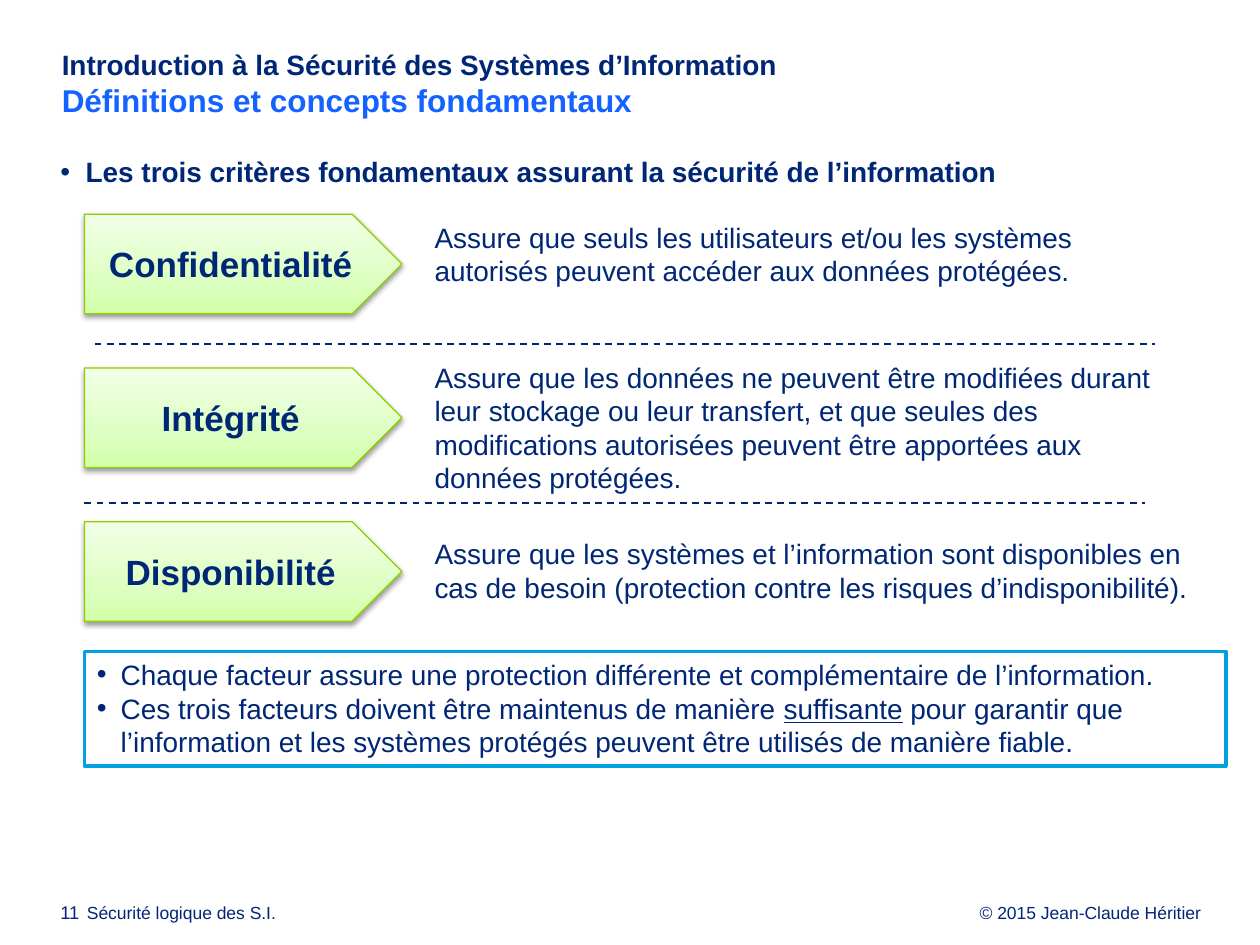
from pptx import Presentation, util as u
from pptx.dml.color import RGBColor
from pptx.enum import dml, shapes, text
from pptx.oxml import parse_xml
from pptx.oxml.ns import nsdecls, qn

NAVY, BLUE, CYAN, LIME = "002776", "1462FF", "00A1DE", "8FCF00"
GRAD = [(0, "D0FFA8"), (35, "DDFFC2"), (100, "F2FFE8")]
TITLE = [("Introduction à la Sécurité des Systèmes d’Information", 16, NAVY),
         ("Définitions et concepts fondamentaux", 18, BLUE)]
HEAD = "Les trois critères fondamentaux assurant la sécurité de l’information"
ROWS = [
    ("Confidentialité", 1.7, 0.64,
     "Assure que seuls les utilisateurs et/ou les systèmes autorisés "
     "peuvent accéder aux données protégées."),
    ("Intégrité", 2.81, 1.18,
     "Assure que les données ne peuvent être modifiées durant leur stockage ou leur "
     "transfert, et que seules des modifications autorisées peuvent être apportées "
     "aux données protégées."),
    ("Disponibilité", 4.21, 0.64,
     "Assure que les systèmes et l’information sont disponibles en cas de besoin "
     "(protection contre les risques d’indisponibilité)."),
]
NOTES = [
    [("Chaque facteur assure une protection différente et complémentaire "
      "de l’information.", False)],
    [("Ces trois facteurs doivent être maintenus de manière ", False),
     ("suffisante", True),
     (" pour garantir que l’information et les systèmes protégés peuvent être "
      "utilisés de manière fiable.", False)],
]
RULES = [(0.75, 2.73), (0.67, 3.99)]
FOOT = [("11", 0.48, 0.26, 10.5, "LEFT"),
        ("Sécurité logique des S.I.", 0.69, 2.53, 10, "LEFT"),
        ("© 2015 Jean-Claude Héritier", 7, 2.53, 10, "RIGHT")]


def rgb(hue):
    return RGBColor.from_string(hue)


def put(obj, **vals):
    for key, val in vals.items():
        setattr(obj, key, val)


def box(*at):
    return [u.Inches(n) for n in at]


def frame(shape, ins=(0.1, 0.05, 0.1, 0.05), anchor="TOP"):
    left, top, right, base = box(*ins)
    put(shape.text_frame, margin_left=left, margin_top=top, margin_right=right,
        margin_bottom=base, word_wrap=True,
        vertical_anchor=getattr(text.MSO_ANCHOR, anchor))
    return shape.text_frame


def write(para, words, size=16, hue=NAVY, bold=False, line=False):
    run = para.add_run()
    run.text = words
    put(run.font, name="Arial", size=u.Pt(size), bold=bold, underline=line)
    run.font.color.rgb = rgb(hue)


def align(para, side):
    para.alignment = getattr(text.PP_ALIGN, side)


def bullet(para, gap):
    prop = para._p.get_or_add_pPr()
    prop.set("marL", str(u.Inches(gap)))
    prop.set("indent", str(-u.Inches(gap)))
    for tag in ('a:buFont %s typeface="Arial"', 'a:buChar %s char="•"'):
        prop.append(parse_xml(f"<{tag % nsdecls('a')}/>"))


def shade(shape):
    shape.fill.gradient()
    shape.fill.gradient_angle = 90
    stops = shape._element.spPr.find(qn("a:gradFill")).find(qn("a:gsLst"))
    for stop in list(stops):
        stops.remove(stop)
    for pos, hue in GRAD:
        stops.append(parse_xml(f'<a:gs {nsdecls("a")} pos="{pos * 1000}">'
                               f'<a:srgbClr val="{hue}"/></a:gs>'))
    shape._element.spPr.find(qn("a:effectLst")).append(parse_xml(
        f'<a:outerShdw {nsdecls("a")} blurRad="{u.Pt(3.1)}" dist="{u.Pt(1.6)}" '
        'dir="5400000" rotWithShape="0"><a:srgbClr val="000000">'
        '<a:alpha val="38000"/></a:srgbClr></a:outerShdw>'))


def draw(slide, kind, at, hue, width):
    shape = slide.shapes.add_shape(kind, *box(*at))
    shape.shadow.inherit = False
    shape.line.color.rgb = rgb(hue)
    shape.line.width = u.Pt(width)
    return shape


def main():
    deck = Presentation()
    put(deck, slide_width=u.Inches(10), slide_height=u.Inches(7.5))
    slide = deck.slides.add_slide(deck.slide_layouts[5])
    parts = slide.shapes

    title = parts.title
    left, top, width, height = box(0.45, 0.38, 9.21, 0.69)
    put(title, left=left, top=top, width=width, height=height)
    para = frame(title, (0.04, 0, 0, 0)).paragraphs[0]
    align(para, "LEFT")
    for num, (words, size, hue) in enumerate(TITLE):
        if num:
            para.add_line_break()
        write(para, words, size, hue, True)

    head = parts.add_textbox(*box(0.44, 1.23, 9.2, 0.39))
    para = frame(head, (0.04, 0, 0, 0)).paragraphs[0]
    write(para, HEAD, bold=True)
    bullet(para, 0.2)

    for num, (name, top, height, words) in enumerate(ROWS):
        arrow = draw(slide, shapes.MSO_SHAPE.PENTAGON,
                     (0.67, 1.7 + 1.22 * num, 2.52, 0.79), LIME, 0.75)
        shade(arrow)
        para = frame(arrow, anchor="MIDDLE").paragraphs[0]
        align(para, "CENTER")
        write(para, name, 20, bold=True)
        note = parts.add_textbox(*box(3.35, top, 6.22, height))
        write(frame(note).paragraphs[0], words)

    panel = draw(slide, shapes.MSO_SHAPE.RECTANGLE, (0.67, 5.17, 9.06, 0.91), CYAN, 2)
    panel.fill.solid()
    panel.fill.fore_color.rgb = rgb("FFFFFF")
    body = frame(panel)
    for num, runs in enumerate(NOTES):
        para = body.add_paragraph() if num else body.paragraphs[0]
        align(para, "LEFT")
        bullet(para, 0.19)
        for words, line in runs:
            write(para, words, line=line)

    for left, top in RULES:
        rule = parts.add_connector(shapes.MSO_CONNECTOR.STRAIGHT,
                                   *box(left, top, left + 8.42, top))
        rule.line.color.rgb = rgb("002673")
        put(rule.line, width=u.Pt(1), dash_style=dml.MSO_LINE.DASH)
        rule._element.spPr.append(parse_xml(f"<a:effectLst {nsdecls('a')}/>"))

    for words, left, width, size, side in FOOT:
        foot = parts.add_textbox(*box(left, 7.18, width, 0.16))
        para = frame(foot, (0, 0, 0, 0)).paragraphs[0]
        para.line_spacing = u.Pt(10.8)
        align(para, side)
        write(para, words, size)

    deck.save("out.pptx")


if __name__ == "__main__":
    main()
